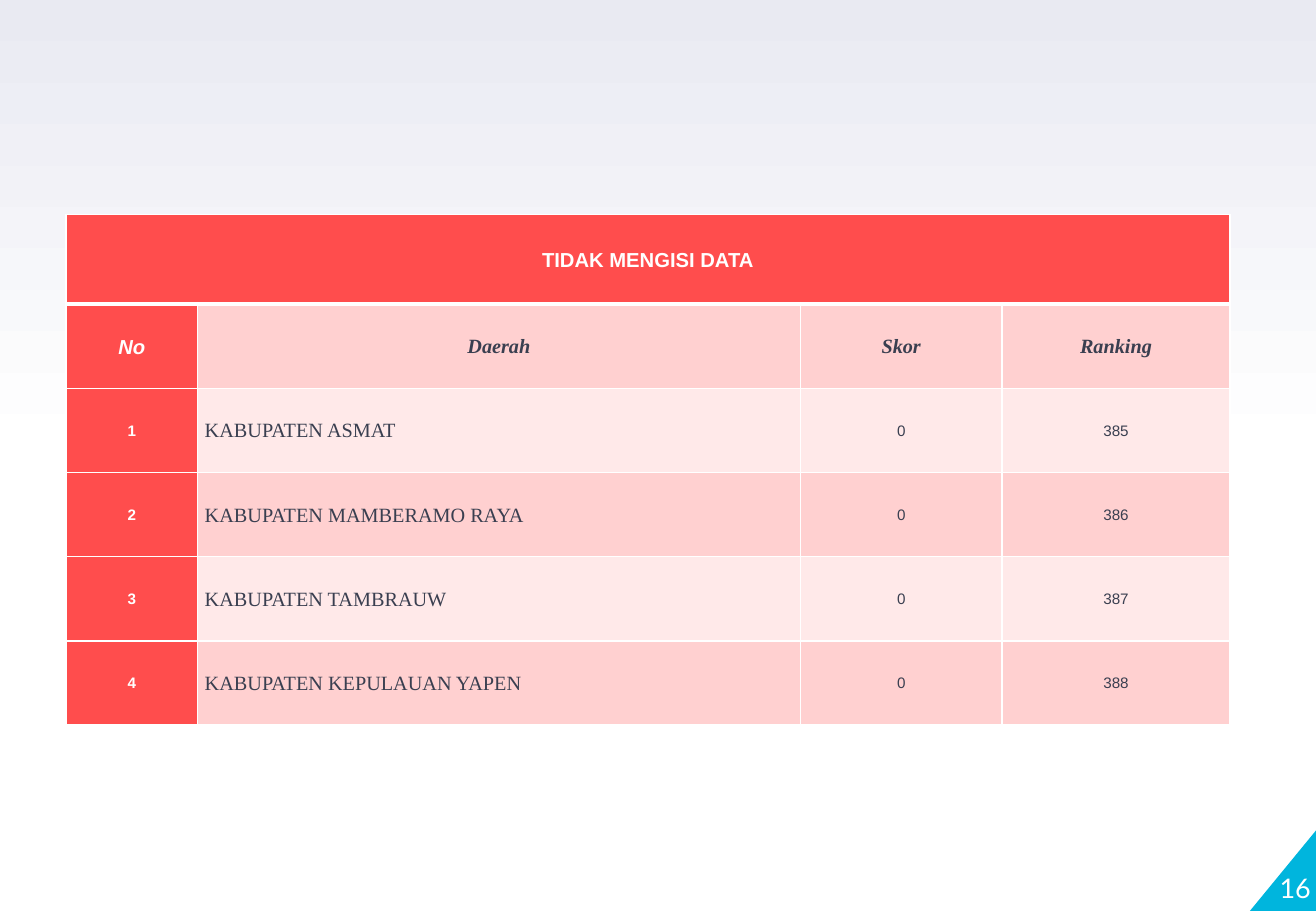
from lxml.etree import SubElement
from pptx import Presentation
from pptx.dml.color import RGBColor
from pptx.enum.shapes import MSO_SHAPE
from pptx.enum.text import MSO_ANCHOR, PP_ALIGN
from pptx.oxml.ns import qn
from pptx.util import Cm, Pt

WHITE, RED, PINK, PALE = "FFFFFF", "FF4D4D", "FFD0D0", "FFE9E9"
INK, CYAN, LAVENDER = "3A3F50", "00B5DD", "E9EAF2"
SANS, SERIF, NUMBER_FONT = "Arial", "Times New Roman", "Lato"

HEADINGS = ["No", "Daerah", "Skor", "Ranking"]
REGIONS = [
    "KABUPATEN ASMAT",
    "KABUPATEN MAMBERAMO RAYA",
    "KABUPATEN TAMBRAUW",
    "KABUPATEN KEPULAUAN YAPEN",
]
FIRST_RANK = 385


def color(value):
    return RGBColor.from_string(value)


class SlideBuilder:
    def __init__(self, slide):
        self.slide = slide

    def background(self, bottom, top):
        fill = self.slide.background.fill
        fill.gradient()
        fill.gradient_angle = 90
        for stop, position, value in zip(fill.gradient_stops, (0.5, 1), (bottom, top)):
            stop.position = position
            stop.color.rgb = color(value)

    def set_text(self, frame, text, size, font, value, align, bold=False, italic=False):
        frame.text = text
        paragraph = frame.paragraphs[0]
        paragraph.alignment = align
        style = paragraph.runs[0].font
        style.size, style.name = Pt(size), font
        style.bold, style.italic = bold, italic
        style.color.rgb = color(value)
        return paragraph

    def corner(self, left, top, width, height, fill):
        shape = self.slide.shapes.add_shape(
            MSO_SHAPE.RIGHT_TRIANGLE, Cm(left), Cm(top), Cm(width), Cm(height))
        shape.shadow.inherit = False
        shape.fill.solid()
        shape.fill.fore_color.rgb = color(fill)
        shape.line.fill.background()
        shape._element.spPr.xfrm.set("flipH", "1")

    def page_number(self, left, top, width, height, text):
        frame = self.slide.shapes.add_textbox(
            Cm(left), Cm(top), Cm(width), Cm(height)).text_frame
        frame.word_wrap = True
        frame.vertical_anchor = MSO_ANCHOR.BOTTOM
        frame.margin_left = frame.margin_right = 0
        frame.margin_top = frame.margin_bottom = 0
        self.set_text(frame, text, 16, NUMBER_FONT, WHITE, PP_ALIGN.RIGHT)

    def table(self, left, top, widths, heights):
        table = self.slide.shapes.add_table(
            len(heights), len(widths), Cm(left), Cm(top),
            Cm(sum(widths)), Cm(sum(heights))).table
        table.first_row = table.horz_banding = False
        for column, width in zip(table.columns, widths):
            column.width = Cm(width)
        for row, height in zip(table.rows, heights):
            row.height = Cm(height)
        return table

    def borders(self, cell, **points):
        properties = cell._tc.get_or_add_tcPr()
        for side in "LRTB":
            line = SubElement(properties, qn(f"a:ln{side}"), w=str(Pt(points.get(side, 1))))
            fill = SubElement(line, qn("a:solidFill"))
            SubElement(fill, qn("a:srgbClr"), val=WHITE)

    def cell(self, cell, text, fill, size, font, value, align=PP_ALIGN.CENTER, **style):
        cell.fill.solid()
        cell.fill.fore_color.rgb = color(fill)
        cell.vertical_anchor = MSO_ANCHOR.MIDDLE
        cell.margin_left = cell.margin_right = Cm(0.15)
        cell.margin_top = cell.margin_bottom = 0
        paragraph = self.set_text(cell.text_frame, text, size, font, value, align, **style)
        paragraph.line_spacing = 1.07
        paragraph.space_after = Pt(8)


def main():
    presentation = Presentation()
    presentation.slide_width, presentation.slide_height = Cm(27.51), Cm(19.05)
    builder = SlideBuilder(presentation.slides.add_slide(presentation.slide_layouts[6]))

    # Background and page corner
    builder.background(WHITE, LAVENDER)
    builder.corner(26.13, 17.32, 1.42, 1.73, CYAN)
    builder.page_number(26.03, 17.17, 1.37, 1.73, "16")

    # Table grid, with a thick line under the banner
    table = builder.table(1.38, 4.49, [2.75, 12.6, 4.22, 4.76], [1.87] + [1.76] * 5)
    thick_lines = {0: {"B": 3}, 1: {"T": 3}}
    for index, row in enumerate(table.rows):
        for cell in row.cells:
            builder.borders(cell, **thick_lines.get(index, {}))

    # Banner and headings
    table.cell(0, 0).merge(table.cell(0, 3))
    builder.cell(table.cell(0, 0), "TIDAK MENGISI DATA", RED, 12, SANS, WHITE, bold=True)
    for column, heading in enumerate(HEADINGS):
        fill, font, value = (PINK, SERIF, INK) if column else (RED, SANS, WHITE)
        builder.cell(table.cell(1, column), heading, fill, 12, font, value,
                     bold=True, italic=True)

    # Regions without data
    for index, region in enumerate(REGIONS):
        number, name, score, rank = table.rows[index + 2].cells
        fill = PINK if index % 2 else PALE
        builder.cell(number, str(index + 1), RED, 9, SANS, WHITE, bold=True)
        builder.cell(name, region, fill, 12, SERIF, INK, PP_ALIGN.LEFT)
        builder.cell(score, "0", fill, 9, SANS, INK)
        builder.cell(rank, str(FIRST_RANK + index), fill, 9, SANS, INK)

    presentation.save("out.pptx")


if __name__ == "__main__":
    main()
